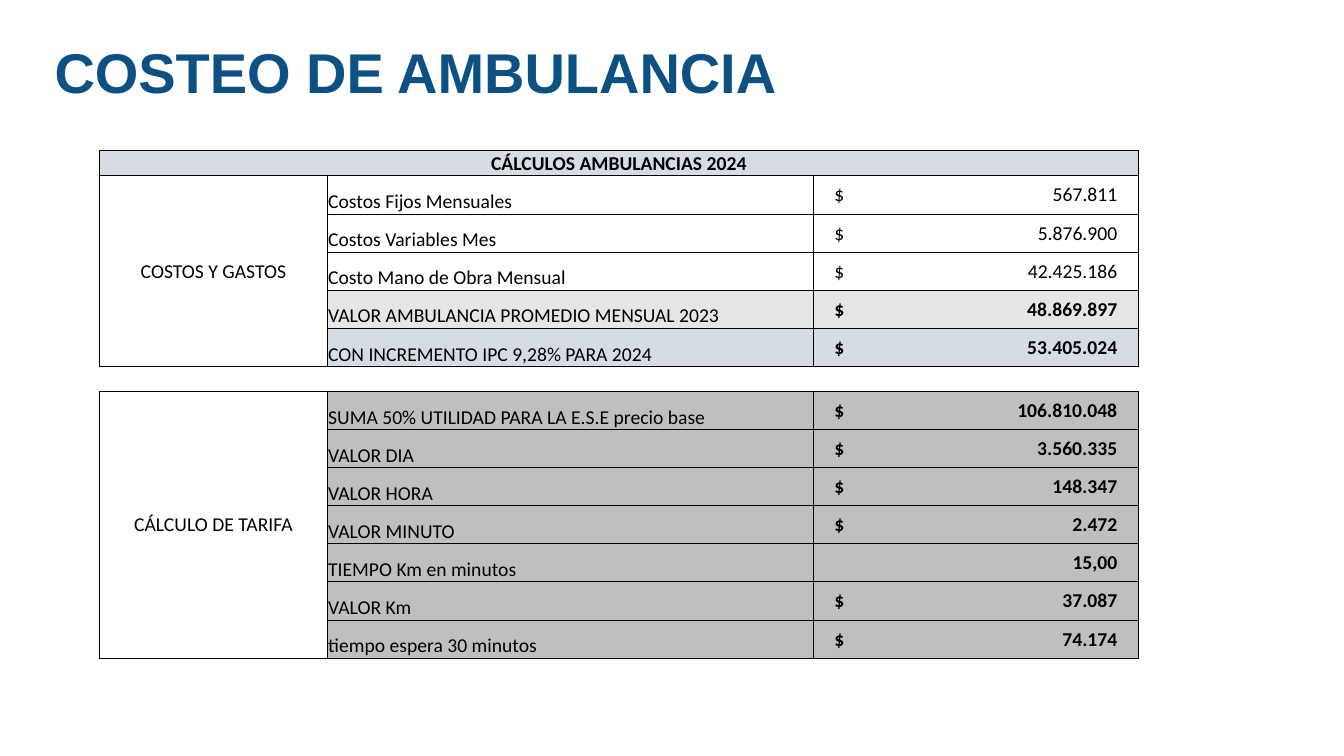
from dataclasses import dataclass

from lxml import etree
from pptx import Presentation
from pptx.dml.color import RGBColor
from pptx.enum.text import MSO_ANCHOR, MSO_AUTO_SIZE, PP_ALIGN
from pptx.oxml.ns import qn
from pptx.util import Cm, Pt

LEFT, CENTER = PP_ALIGN.LEFT, PP_ALIGN.CENTER
MIDDLE, BOTTOM = MSO_ANCHOR.MIDDLE, MSO_ANCHOR.BOTTOM
TITLE_ONLY = 5


@dataclass(frozen=True)
class Theme:
    title_font: str = "Arial"
    table_font: str = "Calibri"
    title_size: int = 40
    table_size: int = 14
    spacer_size: int = 10
    title: str = "0D5084"
    ink: str = "000000"
    blue: str = "D6DCE4"
    light: str = "E7E6E6"
    grey: str = "BFBFBF"
    border_width: float = 0.5


THEME = Theme()

HEADING = "CÁLCULOS AMBULANCIAS 2024"
# Each row: concept, currency sign, amount, fill, bold amount
COSTS = [
    ("Costos Fijos Mensuales", "$", "567.811", None, False),
    ("Costos Variables Mes", "$", "5.876.900", None, False),
    ("Costo Mano de Obra Mensual", "$", "42.425.186", None, False),
    ("VALOR AMBULANCIA PROMEDIO MENSUAL 2023", "$", "48.869.897", THEME.light, True),
    ("CON INCREMENTO IPC 9,28% PARA 2024", "$", "53.405.024", THEME.blue, True),
]
RATES = [
    ("SUMA 50% UTILIDAD PARA LA E.S.E precio base", "$", "106.810.048", THEME.grey, True),
    ("VALOR DIA", "$", "3.560.335", THEME.grey, True),
    ("VALOR HORA", "$", "148.347", THEME.grey, True),
    ("VALOR MINUTO", "$", "2.472", THEME.grey, True),
    ("TIEMPO Km en minutos", "", "15,00", THEME.grey, True),
    ("VALOR Km", "$", "37.087", THEME.grey, True),
    ("tiempo espera 30 minutos", "$", "74.174", THEME.grey, True),
]
COLUMN_WIDTHS = (5.74, 12.24, 8.2)
THIN_ROW, TALL_ROW = 0.63, 0.96
AMOUNT_INDENT, AMOUNT_TAB = 0.54, 7.13


def write_text(frame, text, *, font=THEME.table_font, size=THEME.table_size,
               color=THEME.ink, bold=False, align=LEFT, spacing=None, tab=None):
    para = frame.paragraphs[0]
    para.alignment = align
    if spacing:
        para.line_spacing = spacing
    if tab:
        stops = etree.SubElement(para._p.get_or_add_pPr(), qn("a:tabLst"))
        etree.SubElement(stops, qn("a:tab"), pos=str(Cm(tab)), algn="r")
    if not text:
        etree.SubElement(para._p, qn("a:endParaRPr"), sz=str(size * 100))
        return
    span = para.add_run()
    span.text = text
    span.font.name = font
    span.font.size = Pt(size)
    span.font.bold = bold
    span.font.color.rgb = RGBColor.from_string(color)


def draw_borders(cell, visible):
    properties = cell._tc.get_or_add_tcPr()
    for side in "LRTB":
        line = etree.SubElement(properties, qn(f"a:ln{side}"),
                                w=str(Pt(THEME.border_width)))
        if side in visible:
            fill = etree.SubElement(line, qn("a:solidFill"))
            etree.SubElement(fill, qn("a:srgbClr"), val=THEME.ink)
        else:
            etree.SubElement(line, qn("a:noFill"))


def format_cell(cell, text="", *, fill=None, anchor=MIDDLE, indent=0.02,
                borders="LRTB", **text_format):
    draw_borders(cell, borders)
    if fill:
        cell.fill.solid()
        cell.fill.fore_color.rgb = RGBColor.from_string(fill)
    else:
        cell.fill.background()
    cell.vertical_anchor = anchor
    cell.margin_left = Cm(indent)
    cell.margin_right = cell.margin_top = Cm(0.02)
    cell.margin_bottom = 0
    write_text(cell.text_frame, text, **text_format)


def add_title(page, left, top, width, height):
    box = page.shapes.title
    box.left, box.top, box.width, box.height = map(Cm, (left, top, width, height))
    frame = box.text_frame
    frame.auto_size = MSO_AUTO_SIZE.NONE
    frame.word_wrap = True
    frame.vertical_anchor = BOTTOM
    write_text(frame, "COSTEO DE AMBULANCIA", font=THEME.title_font,
               size=THEME.title_size, color=THEME.title, bold=True, spacing=0.9)


def fill_section(table, first, name, rows):
    """Fill one group of rows beside a merged name cell."""
    last = first + len(rows) - 1
    for index, (concept, sign, amount, fill, bold) in enumerate(rows, first):
        format_cell(table.cell(index, 0), name if index == first else "", align=CENTER)
        format_cell(table.cell(index, 1), concept, fill=fill, anchor=BOTTOM)
        format_cell(table.cell(index, 2), f"{sign}\t{amount}", fill=fill, bold=bold,
                    indent=AMOUNT_INDENT, tab=AMOUNT_TAB)
    table.cell(first, 0).merge(table.cell(last, 0))


def add_cost_table(page, left, top):
    spacer = len(COSTS) + 1
    heights = [TALL_ROW] * (spacer + 1 + len(RATES))
    heights[0] = heights[spacer] = THIN_ROW
    table = page.shapes.add_table(
        len(heights), len(COLUMN_WIDTHS), Cm(left), Cm(top),
        Cm(sum(COLUMN_WIDTHS)), Cm(sum(heights))).table
    table.first_row = table.horz_banding = False
    for column, width in zip(table.columns, COLUMN_WIDTHS):
        column.width = Cm(width)
    for row, height in zip(table.rows, heights):
        row.height = Cm(height)

    # Heading and blank divider rows
    for index in range(len(COLUMN_WIDTHS)):
        format_cell(table.cell(0, index), "" if index else HEADING,
                    fill=THEME.blue, bold=True, align=CENTER)
        format_cell(table.cell(spacer, index), borders="TB", size=THEME.spacer_size)
    table.cell(0, 0).merge(table.cell(0, len(COLUMN_WIDTHS) - 1))

    # Costs above the divider, rates below
    fill_section(table, 1, "COSTOS Y GASTOS", COSTS)
    fill_section(table, spacer + 1, "CÁLCULO DE TARIFA", RATES)


def main():
    deck = Presentation()
    deck.slide_width, deck.slide_height = Cm(33.87), Cm(19.05)
    page = deck.slides.add_slide(deck.slide_layouts[TITLE_ONLY])
    add_title(page, 1.12, 0.74, 20.78, 2.06)
    add_cost_table(page, 2.51, 3.8)
    deck.save("out.pptx")


if __name__ == "__main__":
    main()
